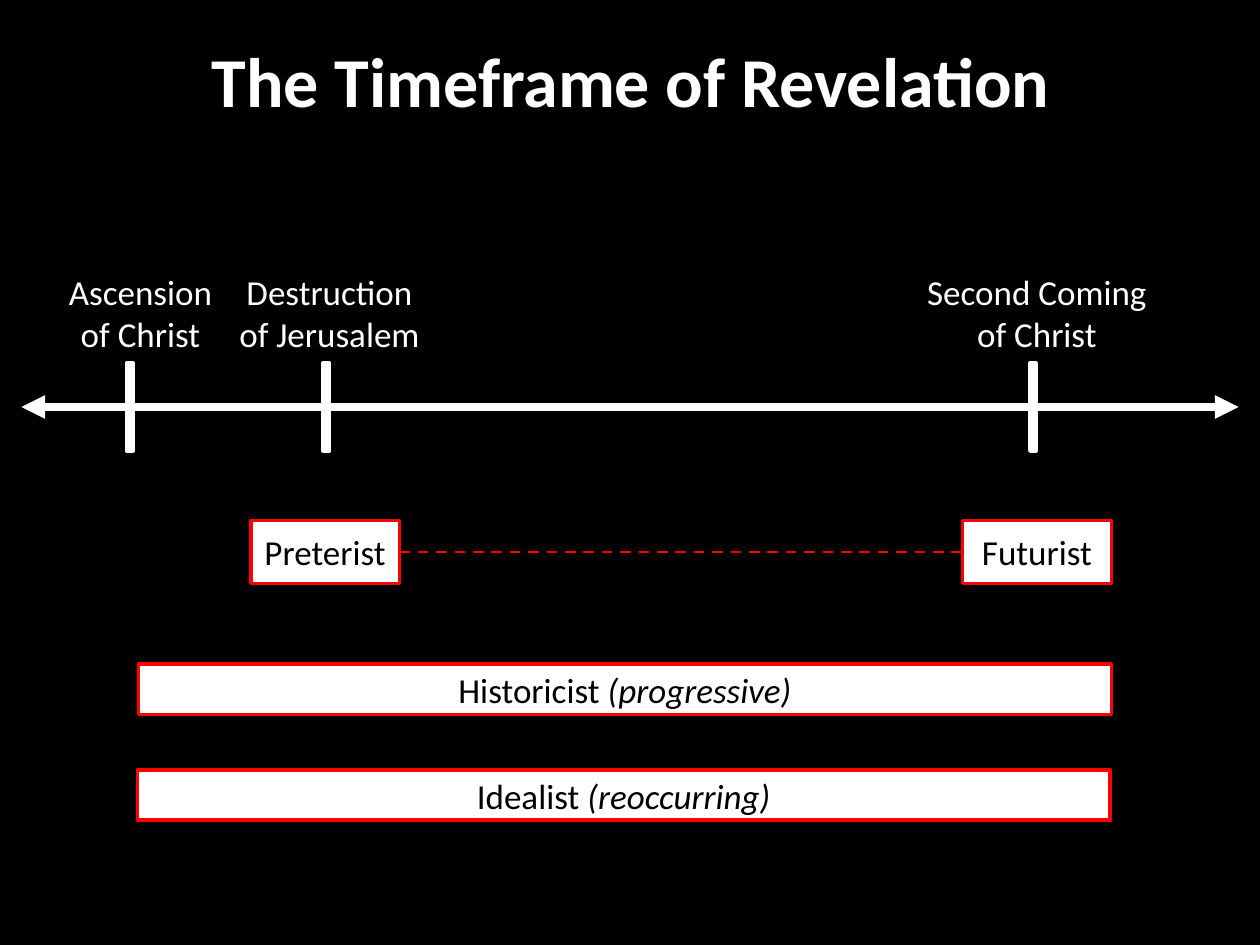
from lxml import etree
from pptx import Presentation
from pptx.dml.color import RGBColor
from pptx.enum.dml import MSO_LINE
from pptx.enum.shapes import MSO_CONNECTOR, MSO_SHAPE
from pptx.enum.text import MSO_ANCHOR, PP_ALIGN
from pptx.oxml.ns import qn
from pptx.util import Inches, Pt

RECTANGLE = MSO_SHAPE.RECTANGLE
STRAIGHT = MSO_CONNECTOR.STRAIGHT
DASH = MSO_LINE.DASH
CENTER = PP_ALIGN.CENTER
TOP, MIDDLE = MSO_ANCHOR.TOP, MSO_ANCHOR.MIDDLE
LEFT_SIDE, RIGHT_SIDE = 1, 3

THEME = {
    "font": "Calibri",
    "background": RGBColor(0x00, 0x00, 0x00),
    "light": RGBColor(0xFF, 0xFF, 0xFF),
    "dark": RGBColor(0x00, 0x00, 0x00),
    "accent": RGBColor(0xFF, 0x00, 0x00),
    "title_size": 40,
    "body_size": 20,
}

TITLE = "The Timeframe of Revelation"
EVENTS = [
    (1.03, (0.44, 1.35), ["Ascension", "of Christ"]),
    (2.59, (1.79, 1.65), ["Destruction", "of Jerusalem"]),
    (8.20, (7.25, 1.96), ["Second Coming", "of Christ"]),
]
VIEWS = {
    "Preterist": ("", (1.99, 4.13, 1.18, 0.5)),
    "Futurist": ("", (7.64, 4.13, 1.18, 0.5)),
    "Historicist": ("(progressive)", (1.10, 5.27, 7.72, 0.4)),
    "Idealist": ("(reoccurring)", (1.09, 6.11, 7.72, 0.4)),
}
AXIS_Y, AXIS_START, AXIS_END = 3.23, 0.17, 9.83
TICK_WIDTH, TICK_HEIGHT = 0.05, 0.7
LABEL_TOP, LABEL_HEIGHT = 2.1, 0.77


def write(shape, lines, *, size=THEME["body_size"], color=THEME["light"],
          bold=False, emphasis="", anchor=TOP, wrap=False, inset=0.05):
    frame = shape.text_frame
    frame.word_wrap = wrap
    frame.vertical_anchor = anchor
    frame.margin_left = frame.margin_right = Inches(0.1)
    frame.margin_top = frame.margin_bottom = Inches(inset)
    paragraph = frame.paragraphs[0]
    paragraph.alignment = CENTER

    def add_run(text, italic=False):
        run = paragraph.add_run()
        run.text = text
        run.font.name = THEME["font"]
        run.font.size = Pt(size)
        run.font.bold = bold
        run.font.italic = italic
        run.font.color.rgb = color

    for index, line in enumerate(lines):
        if index:
            paragraph.add_line_break()
        add_run(line + " " if emphasis else line)
    if emphasis:
        add_run(emphasis, italic=True)


def add_text(slide, box, lines, **style):
    write(slide.shapes.add_textbox(*map(Inches, box)), lines, **style)


def add_bar(slide, box, outline):
    bar = slide.shapes.add_shape(RECTANGLE, *map(Inches, box))
    bar.shadow.inherit = False
    bar.fill.solid()
    bar.fill.fore_color.rgb = THEME["light"]
    bar.line.color.rgb = outline
    bar.line.width = Pt(2)
    return bar


def add_line(slide, start, end, color, width):
    connector = slide.shapes.add_connector(STRAIGHT, *map(Inches, start + end))
    connector.line.color.rgb = color
    connector.line.width = Pt(width)
    etree.SubElement(connector._element.spPr, qn("a:effectLst"))
    return connector


def add_arrowheads(connector):
    outline = connector.line._get_or_add_ln()
    for end in ("a:headEnd", "a:tailEnd"):
        etree.SubElement(outline, qn(end), type="triangle")


def add_timeline(slide):
    axis = add_line(slide, (AXIS_START, AXIS_Y), (AXIS_END, AXIS_Y), THEME["light"], 4.5)
    add_arrowheads(axis)
    for tick_x, (label_left, label_width), lines in EVENTS:
        tick = (tick_x - TICK_WIDTH / 2, AXIS_Y - TICK_HEIGHT / 2, TICK_WIDTH, TICK_HEIGHT)
        add_bar(slide, tick, THEME["light"])
        add_text(slide, (label_left, LABEL_TOP, label_width, LABEL_HEIGHT), lines)


def add_views(slide):
    bars = {}
    for view, (emphasis, box) in VIEWS.items():
        bars[view] = add_bar(slide, box, THEME["accent"])
        write(bars[view], [view], color=THEME["dark"], emphasis=emphasis,
              anchor=MIDDLE, inset=0)
    span = add_line(slide, (3.17, 4.38), (7.64, 4.38), THEME["accent"], 1.5)
    span.line.dash_style = DASH
    span.begin_connect(bars["Preterist"], RIGHT_SIDE)
    span.end_connect(bars["Futurist"], LEFT_SIDE)


def main():
    deck = Presentation()
    deck.slide_width, deck.slide_height = Inches(10), Inches(7.5)
    slide = deck.slides.add_slide(deck.slide_layouts[6])
    slide.background.fill.solid()
    slide.background.fill.fore_color.rgb = THEME["background"]
    add_text(slide, (0.17, 0.25, 9.67, 6.83), [TITLE], size=THEME["title_size"],
             bold=True, wrap=True)
    add_timeline(slide)
    add_views(slide)
    deck.save("out.pptx")


if __name__ == "__main__":
    main()
